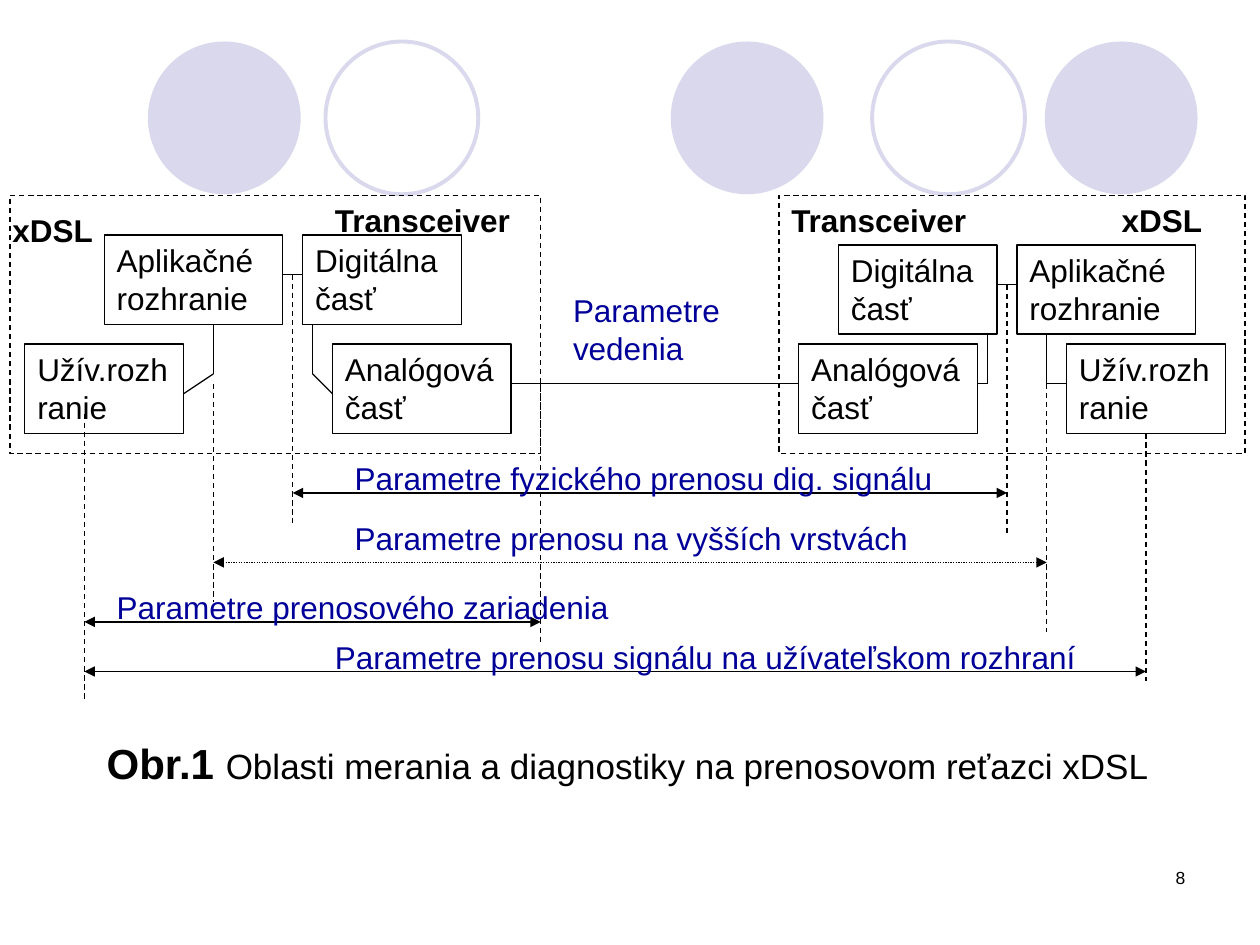
from lxml import etree
from pptx import Presentation, util as u
from pptx.dml.color import RGBColor
from pptx.enum import dml, shapes, text
from pptx.oxml.ns import qn

BLACK = RGBColor(0x00, 0x00, 0x00)
NAVY = RGBColor(0x00, 0x00, 0x99)
LAVENDER = RGBColor(0xD9, 0xD8, 0xEC)
DASH = dml.MSO_LINE.DASH
DOT = dml.MSO_LINE.ROUND_DOT


class Diagram:
    """Style and slide; lengths are columns and rows of a 2 mm grid."""
    cell = u.Cm(0.2)
    left, top = u.Inches(0.04), u.Inches(1.55)
    font = "Arial"

    def __init__(self, slide):
        self.shapes = slide.shapes

    def point(self, col, row):
        return round(self.left + col * self.cell), round(self.top + row * self.cell)

    def area(self, col, row, cols, rows):
        return *self.point(col, row), round(cols * self.cell), round(rows * self.cell)

    def outline(self, line, color, width, dash=None):
        line.color.rgb = color
        line.width = u.Pt(width)
        if dash:
            line.dash_style = dash

    def set_text(self, frame, runs, color=BLACK, align=text.PP_ALIGN.LEFT):
        """Fill a frame with one paragraph of (words, size, bold) runs."""
        frame.word_wrap = True
        frame.vertical_anchor = text.MSO_ANCHOR.TOP
        paragraph = frame.paragraphs[0]
        paragraph.alignment = align
        paragraph.font.name = self.font
        paragraph.font.color.rgb = color
        if len(runs) == 1:
            words, size, bold = runs[0]
            paragraph.text = words
            paragraph.font.size, paragraph.font.bold = u.Pt(size), bold
            return
        for words, size, bold in runs:
            run = paragraph.add_run()
            run.text = words
            run.font.size, run.font.bold = u.Pt(size), bold

    def shape(self, kind, area, fill=None, line=None, width=0.75, dash=None):
        shape = self.shapes.add_shape(kind, *self.area(*area))
        shape.shadow.inherit = False
        if fill is None:
            shape.fill.background()
        else:
            shape.fill.solid()
            shape.fill.fore_color.rgb = fill
        if line is None:
            shape.line.fill.background()
        else:
            self.outline(shape.line, line, width, dash)
        return shape

    def circle(self, col, filled):
        area = (col, -15.5, 15.4, 15.4)
        if filled:
            self.shape(shapes.MSO_SHAPE.OVAL, area, fill=LAVENDER)
        else:
            self.shape(shapes.MSO_SHAPE.OVAL, area, line=LAVENDER, width=2.25)

    def block(self, words, col, row, cols):
        block = self.shape(shapes.MSO_SHAPE.RECTANGLE, (col, row, cols, 9), line=BLACK)
        self.set_text(block.text_frame, [(words, 18, False)])

    def zone(self, col, cols):
        self.shape(shapes.MSO_SHAPE.RECTANGLE, (col, 0, cols, 26), line=BLACK, dash=DASH)

    def label(self, runs, col, row, cols, rows=5, **style):
        box = self.shapes.add_textbox(*self.area(col, row, cols, rows))
        self.set_text(box.text_frame, runs, **style)

    def line(self, start, end, dash=None, arrows=False, width=0.75):
        line = self.shapes.add_connector(
            shapes.MSO_CONNECTOR.STRAIGHT, *self.point(*start), *self.point(*end))
        self.outline(line.line, BLACK, width, dash)
        if arrows:
            for end_tag in ("a:headEnd", "a:tailEnd"):
                etree.SubElement(line.get_or_add_ln(), qn(end_tag), type="triangle")
        etree.SubElement(line._element.spPr, qn("a:effectLst"))

    def link(self, *points):
        for start, end in zip(points, points[1:]):
            self.line(start, end)


def main():
    deck = Presentation()
    deck.slide_width, deck.slide_height = u.Inches(10), u.Inches(7.5)
    diagram = Diagram(deck.slides.add_slide(deck.slide_layouts[6]))

    # Decorative circles
    for col, filled in ((67.1, True), (104.8, True), (14.4, True),
                        (87.4, False), (32.3, False)):
        diagram.circle(col, filled)

    # Page number and caption
    diagram.label([("8", 10, False)], 90.6, 67.1, 29.6, 6.4, align=text.PP_ALIGN.RIGHT)
    diagram.label([("Obr.1 ", 24, True),
                   ("Oblasti merania a diagnostiky na prenosovom reťazci xDSL", 20, False)],
                  9, 54, 111, 6.4)

    # Blocks: columns of the left and right ends, with the row of the upper pair
    for user, application, digital, analog, upper in ((2, 10, 30, 33, 4),
                                                      (107, 102, 84, 80, 5)):
        diagram.block("Užív.rozhranie", user, 15, 16)
        diagram.block("Aplikačné rozhranie", application, upper, 18)
        diagram.block("Digitálna\včasť", digital, upper, 16)
        diagram.block("Analógová časť", analog, 15, 18)

    # Links between blocks
    diagram.link((28, 8), (30, 8))
    diagram.link((18, 20), (21, 18), (21, 13))
    diagram.link((31, 13), (31, 18), (33, 20))
    diagram.link((100, 9), (102, 9))
    diagram.link((99, 14), (99, 19), (98, 19))
    diagram.link((105, 14), (105, 19), (107, 19))
    diagram.link((51, 19), (80, 19))

    # The two xDSL ends
    diagram.zone(0.5, 53.5)
    diagram.zone(78, 47)
    for words, col, row, cols in (("xDSL", -0.5, 1, 13), ("Transceiver", 32, 0, 21),
                                  ("Transceiver", 78, 0, 21), ("xDSL", 111.3, 0, 13)):
        diagram.label([(words, 18, True)], col, row, cols)

    # Measuring limits: column, first row, last row
    for col, first, last in ((29, 8, 33), (101, 9, 34), (21, 19, 41), (105, 19, 44),
                             (8, 22, 51), (115, 24, 49), (54, 19, 45)):
        diagram.line((col, first), (col, last), dash=DASH)

    # Measured spans: first column, last column, row, dash, width
    for first, last, row, dash, width in ((29, 101, 30, None, 0.75),
                                          (21, 105, 37, DOT, 0.75),
                                          (8, 54, 43, None, 0.75),
                                          (8, 115, 48, None, 1)):
        diagram.line((first, row), (last, row), dash, arrows=True, width=width)

    # Names of the parameters
    for words, col, row, cols, rows in (
            ("Parametre vedenia", 56, 9, 21, 9),
            ("Parametre fyzického prenosu dig. signálu", 34, 26, 64, 5),
            ("Parametre prenosu na vyšších vrstvách", 34, 32, 64, 5),
            ("Parametre prenosového zariadenia", 10, 39, 64, 5),
            ("Parametre prenosu signálu na užívateľskom rozhraní", 32, 44, 84, 5)):
        diagram.label([(words, 18, False)], col, row, cols, rows, color=NAVY)

    deck.save("out.pptx")


if __name__ == "__main__":
    main()
